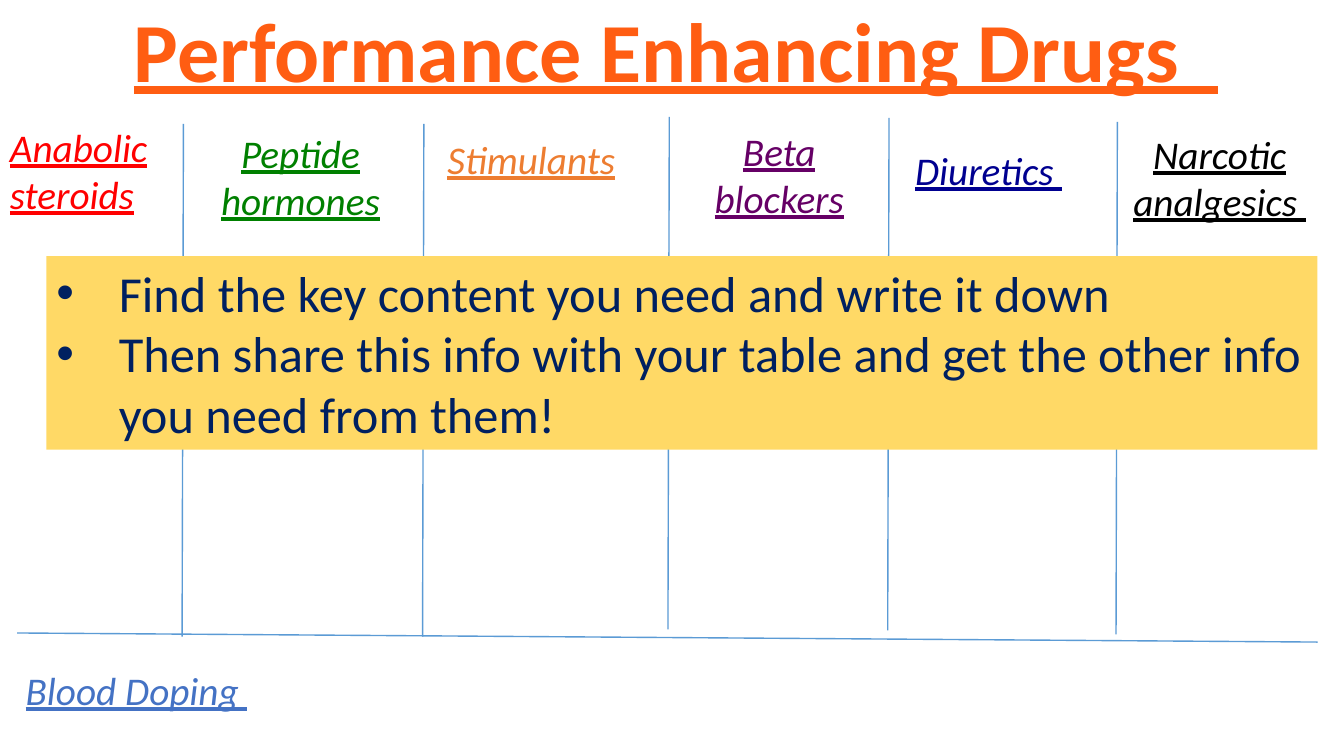
from pptx import Presentation
from pptx import util as u
from pptx.dml.color import RGBColor
from pptx.enum import shapes, text
from pptx.oxml.ns import qn
from lxml import etree

WIDE, HIGH = u.Inches(13.33), u.Inches(7.5)
ORANGE = RGBColor(0xFF, 0x5D, 0x12)
RED = RGBColor(0xFF, 0x00, 0x00)
GREEN = RGBColor(0x00, 0x80, 0x00)
AMBER = RGBColor(0xED, 0x7D, 0x31)
PLUM = RGBColor(0x66, 0x00, 0x66)
NAVY = RGBColor(0x00, 0x00, 0x90)
BLACK = RGBColor(0x00, 0x00, 0x00)
BLUE = RGBColor(0x44, 0x72, 0xC4)
RULE = RGBColor(0x5B, 0x9B, 0xD5)
GOLD = RGBColor(0xFF, 0xD9, 0x66)
INK = RGBColor(0x00, 0x20, 0x60)
LEFT, MID = text.PP_ALIGN.LEFT, text.PP_ALIGN.CENTER
ROW = {1: 7.6, 2: 13.87}
INDENT = u.Inches(0.62)

HEADS = [
    ("Anabolic steroids", RED, 0, 15.6, 13.95, 2, LEFT),
    ("Peptide hormones", GREEN, 13.43, 16.4, 17.85, 2, MID),
    ("Stimulants", AMBER, 30.23, 17.2, 18.6, 1, MID),
    ("Beta blockers", PLUM, 50.33, 16.13, 15.3, 2, MID),
    ("Diuretics ", NAVY, 66.15, 18.67, 14.85, 1, MID),
    ("Narcotic analgesics ", BLACK, 82.8, 16.53, 15.9, 2, MID),
    ("Blood Doping ", BLUE, 0, 87.47, 20.33, 1, MID),
]
RULES = [(13.65, 16.4), (31.54, 16.4), (49.8, 15.47), (66.15, 15.6), (83.14, 16.13)]
TASKS = [
    "Find the key content you need and write it down",
    "Then share this info with your table and get the other info you need from them!",
]


def across(share):
    return u.Emu(round(WIDE * share / 100))


def down(share):
    return u.Emu(round(HIGH * share / 100))


def area(x, y, w, h):
    return across(x), down(y), across(w), down(h)


def write(para, words, size=28, color=BLACK, align=LEFT, bold=False, slant=False, under=False):
    para.alignment = align
    run = para.add_run()
    run.text = words
    font = run.font
    font.name, font.size = "Calibri", u.Pt(size)
    font.bold, font.italic, font.underline = bold, slant, under
    font.color.rgb = color


def bullet(para):
    props = para._p.get_or_add_pPr()
    props.set("marL", str(INDENT))
    props.set("indent", str(-INDENT))
    etree.SubElement(props, qn("a:buFont")).set("typeface", "Arial")
    etree.SubElement(props, qn("a:buChar")).set("char", "•")


def title(slide):
    shape = slide.shapes.title
    shape.left, shape.top, shape.width, shape.height = area(2.1, 0, 96.38, 14.53)
    frame = shape.text_frame
    frame.vertical_anchor = text.MSO_ANCHOR.MIDDLE
    frame.auto_size = text.MSO_AUTO_SIZE.NONE
    para = frame.paragraphs[0]
    para.line_spacing = 0.9
    write(para, "Performance Enhancing Drugs  ", size=60, color=ORANGE,
          align=MID, bold=True, under=True)


def head(slide, words, color, x, y, w, rows, align):
    frame = slide.shapes.add_textbox(*area(x, y, w, ROW[rows])).text_frame
    frame.word_wrap = True
    frame.auto_size = text.MSO_AUTO_SIZE.SHAPE_TO_FIT_TEXT
    write(frame.paragraphs[0], words, color=color, align=align, slant=True, under=True)


def rule(slide, x, y, to_x, to_y):
    line = slide.shapes.add_connector(
        shapes.MSO_CONNECTOR.STRAIGHT, across(x), down(y), across(to_x), down(to_y))
    line.line.color.rgb = RULE
    line.line.width = u.Pt(1)
    etree.SubElement(line._element.spPr, qn("a:effectLst"))


def panel(slide, tasks):
    box = slide.shapes.add_shape(
        shapes.MSO_SHAPE.RECTANGLE, *area(3.45, 33.87, 94.58, 25.6))
    box.shadow.inherit = False
    box.fill.solid()
    box.fill.fore_color.rgb = GOLD
    box.line.fill.background()
    frame = box.text_frame
    frame.word_wrap = True
    frame.auto_size = text.MSO_AUTO_SIZE.SHAPE_TO_FIT_TEXT
    for i, task in enumerate(tasks):
        para = frame.add_paragraph() if i else frame.paragraphs[0]
        write(para, task, size=36, color=INK)
        bullet(para)


def main():
    deck = Presentation()
    deck.slide_width, deck.slide_height = WIDE, HIGH
    slide = deck.slides.add_slide(deck.slide_layouts[5])
    title(slide)
    for item in HEADS:
        head(slide, *item)
    rule(slide, 1.28, 83.73, 98.03, 84.93)
    for x, y in RULES:
        rule(slide, x, y, x - 0.1, y + 67.8)
    panel(slide, TASKS)
    deck.save("out.pptx")


if __name__ == "__main__":
    main()
